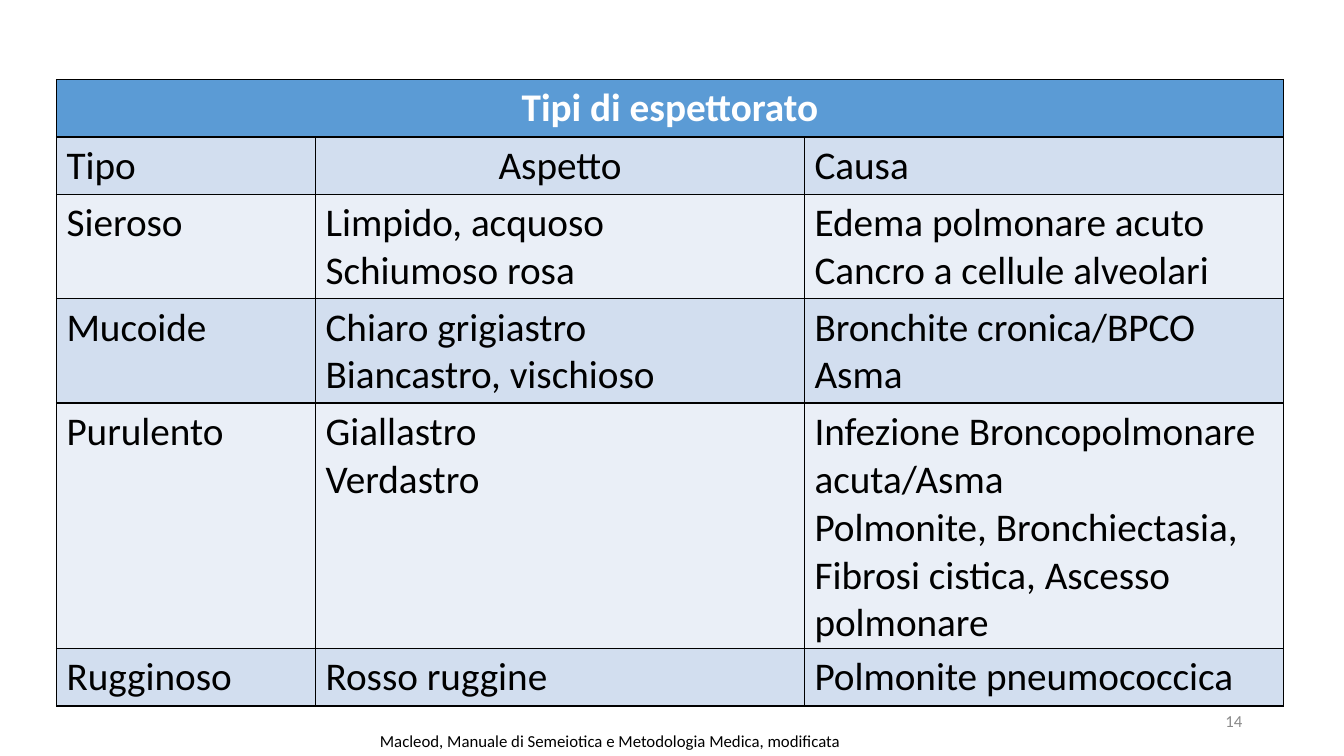
import pptx
import pptx.dml.color
import pptx.enum.text
import pptx.oxml
import pptx.oxml.ns
import pptx.util

ALIGN = pptx.enum.text.PP_ALIGN
ANCHOR = pptx.enum.text.MSO_ANCHOR

HEADING = "Tipi di espettorato"
SPUTUM_ROWS = [
    ("Tipo", "Aspetto", "Causa"),
    ("Sieroso", "Limpido, acquoso\nSchiumoso rosa", "Edema polmonare acuto\nCancro a cellule alveolari"),
    ("Mucoide", "Chiaro grigiastro\nBiancastro, vischioso", "Bronchite cronica/BPCO\nAsma"),
    (
        "Purulento",
        "Giallastro\nVerdastro",
        "Infezione Broncopolmonare acuta/Asma\n"
        "Polmonite, Bronchiectasia, Fibrosi cistica, Ascesso polmonare",
    ),
    ("Rugginoso", "Rosso ruggine", "Polmonite pneumococcica"),
]
COLUMN_SHARES = [19.28, 36.38, 35.63]
ROW_SHARES = [7.6, 7.6, 13.8, 13.8, 32.4, 7.6]


def color(value):
    return pptx.dml.color.RGBColor.from_string(value)


class Page:
    font = "Calibri"
    ink = "000000"
    header = "5B9BD5"
    bands = ("D2DEEF", "EAEFF7")

    def __init__(self, deck):
        self.deck = deck
        self.slide = deck.slides.add_slide(deck.slide_layouts[6])

    def across(self, share):
        return round(self.deck.slide_width * share / 100)

    def down(self, share):
        return round(self.deck.slide_height * share / 100)

    def frame(self, left, top, width, height):
        return self.across(left), self.down(top), self.across(width), self.down(height)

    def set_text(self, text_frame, text, size, ink, align=ALIGN.LEFT, bold=False):
        text_frame.text = text
        for para in text_frame.paragraphs:
            para.alignment = align
            para.font.name = self.font
            para.font.size = pptx.util.Pt(size)
            para.font.bold = bold
            para.font.color.rgb = color(ink)

    def label(self, text, place, ink, align=ALIGN.LEFT, anchor=ANCHOR.TOP):
        box = self.slide.shapes.add_textbox(*self.frame(*place))
        box.text_frame.word_wrap = True
        box.text_frame.vertical_anchor = anchor
        self.set_text(box.text_frame, text, 12, ink, align)

    def border(self, cell):
        properties = cell._tc.get_or_add_tcPr()
        for side in ("lnL", "lnR", "lnT", "lnB"):
            properties.append(pptx.oxml.parse_xml(
                f'<a:{side} {pptx.oxml.ns.nsdecls("a")} w="12700"><a:solidFill>'
                f'<a:srgbClr val="{self.ink}"/></a:solidFill></a:{side}>'
            ))

    def table(self, heading, rows, left, top, column_shares, row_shares):
        place = self.frame(left, top, sum(column_shares), sum(row_shares))
        grid = self.slide.shapes.add_table(len(row_shares), len(column_shares), *place).table
        for column, share in zip(grid.columns, column_shares):
            column.width = self.across(share)
        for row, share in zip(grid.rows, row_shares):
            row.height = self.down(share)
        for cell in grid.iter_cells():
            self.border(cell)
            cell.fill.solid()
            cell.fill.fore_color.rgb = color(self.header)
        title = grid.cell(0, 0)
        title.merge(grid.cell(0, len(column_shares) - 1))
        self.set_text(title.text_frame, heading, 28, "FFFFFF", ALIGN.CENTER, True)
        for number, texts in enumerate(rows):
            for position, text in enumerate(texts):
                cell = grid.cell(number + 1, position)
                cell.fill.fore_color.rgb = color(self.bands[number % 2])
                align = ALIGN.CENTER if text == "Aspetto" else ALIGN.LEFT
                self.set_text(cell.text_frame, text, 28, self.ink, align)


def main():
    deck = pptx.Presentation()
    deck.slide_width = pptx.util.Inches(13.33)
    deck.slide_height = pptx.util.Inches(7.5)
    page = Page(deck)
    page.label("14", (70.67, 92.67, 22.5, 5.33), "898989", ALIGN.RIGHT, ANCHOR.MIDDLE)
    page.label(
        "Macleod, Manuale di Semeiotica e Metodologia Medica, modificata",
        (27.53, 96, 36.23, 4),
        page.ink,
    )
    page.table(HEADING, SPUTUM_ROWS, 4.2, 10.53, COLUMN_SHARES, ROW_SHARES)
    deck.save("out.pptx")


if __name__ == "__main__":
    main()
